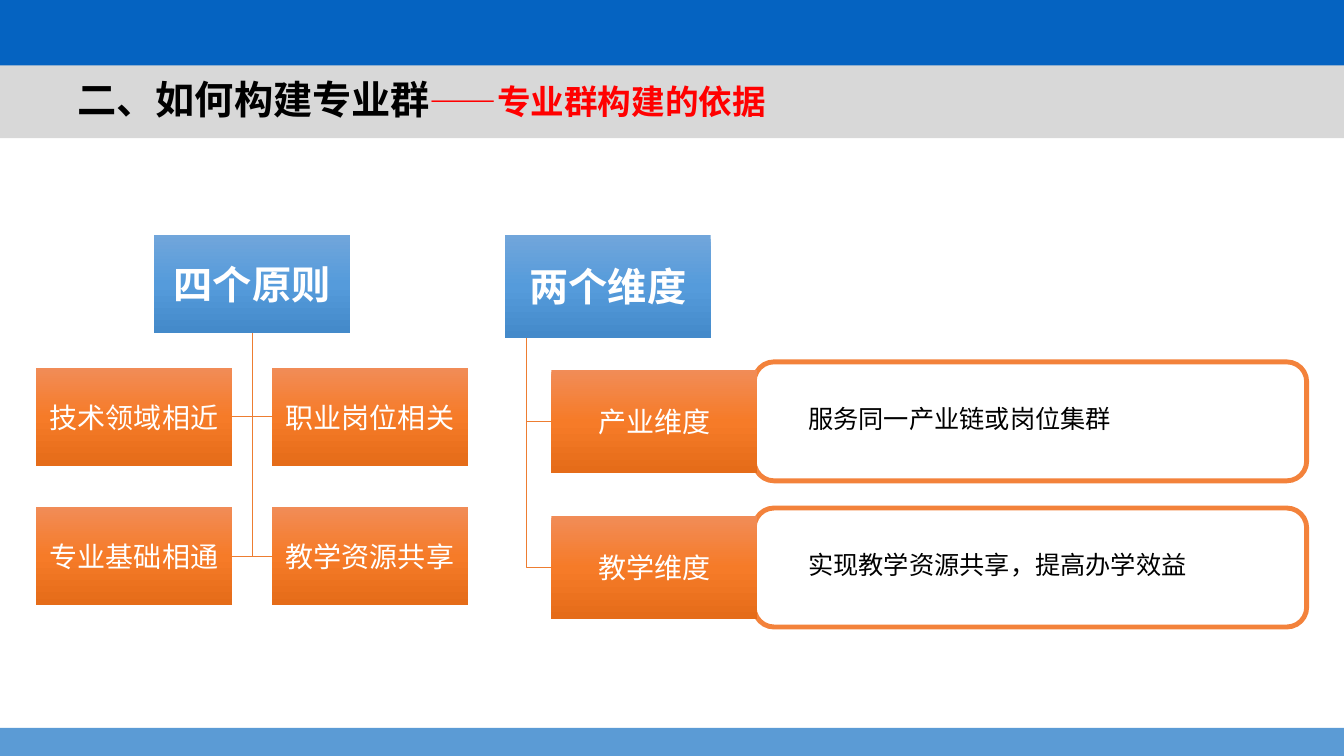
import copy

import pptx
import pptx.dml.color
import pptx.enum.shapes
import pptx.enum.text
import pptx.oxml
import pptx.oxml.ns
import pptx.util

Inches, Pt = pptx.util.Inches, pptx.util.Pt
SHAPE = pptx.enum.shapes.MSO_SHAPE
ANCHOR = pptx.enum.text.MSO_ANCHOR
ALIGN = pptx.enum.text.PP_ALIGN
qn = pptx.oxml.ns.qn

FONT = "Noto Sans CJK SC"
BLUE = ["71A6DB", "559BDB", "448ACA"]
ORANGE = ["F18C57", "F67B28", "E56C19"]
BANDS = [(0.6, 0.77, "D8D8D8"), (0, 0.65, "0563C1"), (7.22, 0.28, "5B9BD5")]
TITLE = [("二、如何构建专业群", 28, "000000"), ("——专业群构建的依据", 24, "FF0000")]
PRINCIPLES = ("四个原则", [["技术领域相近", "职业岗位相关"],
                       ["专业基础相通", "教学资源共享"]])
DIMENSIONS = ("两个维度", [("产业维度", "服务同一产业链或岗位集群"),
                       ("教学维度", "实现教学资源共享，提高办学效益")])

prs = pptx.Presentation()
prs.slide_width, prs.slide_height = Inches(13.33), Inches(7.5)
s = prs.slides.add_slide(prs.slide_layouts[6])


def rgb(value):
    return pptx.dml.color.RGBColor.from_string(value)


def add_run(p, text, size=20, color="FFFFFF", bold=False):
    r = p.add_run()
    r.text = text
    r.font.size, r.font.bold = Pt(size), bold
    r.font.color.rgb = rgb(color)
    r.font.name = FONT
    ea = pptx.oxml.parse_xml(f'<a:ea {pptx.oxml.ns.nsdecls("a")} typeface="{FONT}"/>')
    r.font._element.find(qn("a:latin")).addnext(ea)


def write(sp, text, align=ALIGN.CENTER, insets=(0.01, 0.01, 0.01, 0.01), **style):
    tf = sp.text_frame
    tf.word_wrap = True
    tf.vertical_anchor = ANCHOR.MIDDLE
    tf.margin_left, tf.margin_top, tf.margin_right, tf.margin_bottom = map(Inches, insets)
    p = tf.paragraphs[0]
    p.alignment = align
    add_run(p, text, **style)


def add_box(x, y, w, h, kind=SHAPE.RECTANGLE):
    sp = s.shapes.add_shape(kind, Inches(x), Inches(y), Inches(w), Inches(h))
    sp.shadow.inherit = False
    sp.line.fill.background()
    return sp


def add_node(text, x, y, w, h, colors, **style):
    sp = add_box(x, y, w, h)
    sp.fill.gradient()
    first = sp._element.spPr.find(".//" + qn("a:gs"))
    first.addnext(copy.deepcopy(first))
    for stop, position, color in zip(sp.fill.gradient_stops, (0, 0.5, 1), colors):
        stop.position = position
        stop.color.rgb = rgb(color)
    sp.fill.gradient_angle = 270
    write(sp, text, **style)


def add_elbow(x, top, end_x, end_y):
    fb = s.shapes.build_freeform(Inches(x), Inches(top))
    fb.add_line_segments([(Inches(x), Inches(end_y)),
                          (Inches(end_x), Inches(end_y))], close=False)
    sp = fb.convert_to_shape()
    sp.shadow.inherit = False
    sp.fill.background()
    sp.line.color.rgb = rgb("ED7D31")
    sp.line.width = Pt(0.5)


def add_detail(text, y):
    sp = add_box(7.48, y, 5.48, 1.18, SHAPE.ROUNDED_RECTANGLE)
    sp.fill.background()
    sp.line.color.rgb = rgb("F3823B")
    sp.line.width = Pt(3.5)
    write(sp, text, align=ALIGN.LEFT, insets=(0.48, 0.05, 0.1, 0.11),
          size=18, color="000000")


def add_principles(x=0.36, y=2.33, w=1.94, h=0.97, gap=0.4):
    heading, rows = PRINCIPLES
    step_x, step_y = w + gap, 1.38
    heading_x = x + step_x / 2
    trunk = heading_x + w / 2
    first_y = y + 1.32
    for i in range(len(rows)):
        for end_x in (x + w, x + step_x):
            add_elbow(trunk, y + h, end_x, first_y + i * step_y + h / 2)
    add_node(heading, heading_x, y, w, h, BLUE, size=28, bold=True)
    for i, row in enumerate(rows):
        for j, text in enumerate(row):
            add_node(text, x + j * step_x, first_y + i * step_y, w, h, ORANGE)


def add_dimensions(x=5.01, y=2.33, w=2.04, h=1.02):
    heading, rows = DIMENSIONS
    child_x, first_y, step = x + 0.46, y + 1.34, 1.45
    for i, (name, detail) in enumerate(rows):
        child_y = first_y + i * step
        add_detail(detail, child_y - 0.08)
        add_elbow(x + 0.21, y + h, child_x, child_y + h / 2)
        add_node(name, child_x, child_y, w, h, ORANGE)
    add_node(heading, x, y, w, h, BLUE, size=28, bold=True)


def add_title():
    tf = s.shapes.add_textbox(Inches(0.67), Inches(0.75), Inches(7.84), Inches(0.47)).text_frame
    tf.word_wrap = True
    p = tf.paragraphs[0]
    p.line_spacing = 0.9
    for text, size, color in TITLE:
        add_run(p, text, size, color, bold=True)


for top, height, color in BANDS:
    band = add_box(0, top, 13.33, height)
    band.fill.solid()
    band.fill.fore_color.rgb = rgb(color)
add_title()
add_principles()
add_dimensions()

prs.save("out.pptx")
